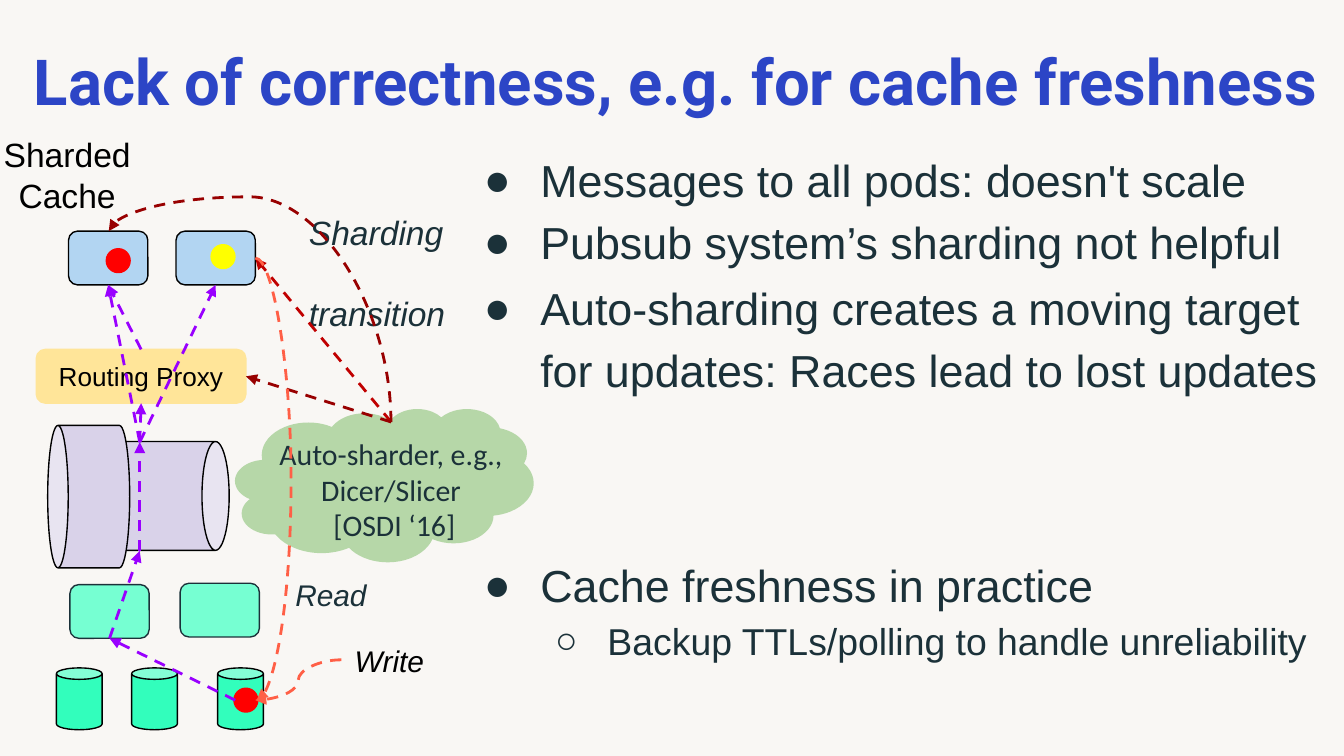
import pptx
import pptx.dml.color
import pptx.enum.dml
import pptx.enum.shapes
import pptx.enum.text
import pptx.oxml.ns
import pptx.util
from dataclasses import dataclass
from lxml import etree

Inches = pptx.util.Inches
Pt = pptx.util.Pt
qn = pptx.oxml.ns.qn
Shape = pptx.enum.shapes.MSO_SHAPE
Connector = pptx.enum.shapes.MSO_CONNECTOR
Align = pptx.enum.text.PP_ALIGN
Anchor = pptx.enum.text.MSO_ANCHOR
rgb = pptx.dml.color.RGBColor.from_string


@dataclass(frozen=True)
class Theme:
    background: str = "F9F7F4"
    title: str = "2C45C6"
    ink: str = "1B3139"
    black: str = "000000"
    pipe: str = "D9D2E9"
    cloud: str = "B6D7A8"
    store: str = "32FEBC"
    server: str = "76FFD2"
    cache: str = "B2D5F2"
    proxy: str = "FFE599"
    stale: str = "FF0000"
    fresh: str = "FFFF00"
    update: str = "9900FF"
    access: str = "FF5F46"
    shard: str = "980000"
    shard_bright: str = "C00000"
    title_size: int = 34
    list_size: int = 24
    sublist_size: int = 20
    label_size: int = 18
    note_size: int = 16
    proxy_size: int = 14


theme = Theme()
deck = pptx.Presentation()
deck.slide_width = Inches(10)
deck.slide_height = deck.slide_width * 9 // 16
page = deck.slides.add_slide(deck.slide_layouts.get_by_name("Comparison"))
page.background.fill.solid()
page.background.fill.fore_color.rgb = rgb(theme.background)


def place(kind, left, top, width, height, fill, line=None, weight=0.75):
    """Add a filled shape, outlined when a line colour is given."""
    shape = page.shapes.add_shape(kind, Inches(left), Inches(top), Inches(width), Inches(height))
    shape.shadow.inherit = False
    shape.fill.solid()
    shape.fill.fore_color.rgb = rgb(fill)
    if line:
        shape.line.color.rgb = rgb(line)
        shape.line.width = Pt(weight)
    else:
        shape.line.fill.background()
    return shape


def dashed_arrow(kind, start, end, color):
    arrow = page.shapes.add_connector(kind, *(Inches(value) for value in start + end))
    arrow.line.color.rgb = rgb(color)
    arrow.line.width = Pt(1.5)
    arrow.line.dash_style = pptx.enum.dml.MSO_LINE.DASH
    properties = arrow._element.spPr
    etree.SubElement(properties.find(qn("a:ln")), qn("a:tailEnd"), type="triangle")
    etree.SubElement(properties, qn("a:effectLst"))
    return arrow


# Title
title = page.shapes.title
title.left, title.top, title.width, title.height = Inches(0.13), Inches(0.32), Inches(9.8), Inches(0.63)
frame = title.text_frame
frame.margin_left = frame.margin_right = frame.margin_top = frame.margin_bottom = 0
frame.vertical_anchor = Anchor.MIDDLE
frame.auto_size = pptx.enum.text.MSO_AUTO_SIZE.NONE
para = frame.paragraphs[0]
para.alignment = Align.CENTER
para.line_spacing = 0.9
span = para.add_run()
span.text = "Lack of correctness, e.g. for cache freshness"
span.font.name, span.font.size, span.font.bold = "Roboto", Pt(theme.title_size), True
span.font.color.rgb = rgb(theme.title)

# Pipe, auto-sharder cloud, stores and servers
for left, top, width, height, turn in [(0.85, 3.24, 0.81, 0.9, 90), (0.13, 3.39, 1.06, 0.61, 270)]:
    place(Shape.CAN, left, top, width, height, theme.pipe, theme.black).rotation = turn
place(Shape.CLOUD, 1.75, 3.04, 2.22, 1.14, theme.cloud)
for left in (0.42, 0.98, 1.62):
    place(Shape.CAN, left, 4.97, 0.34, 0.46, theme.store, theme.black)
server, _ = [place(Shape.ROUNDED_RECTANGLE, left, top, 0.59, 0.4, theme.server, theme.ink)
             for left, top in [(0.52, 4.35), (1.34, 4.34)]]
left_cache, right_cache = [place(Shape.ROUNDED_RECTANGLE, left, 1.72, 0.59, 0.4, theme.cache, theme.black)
                           for left in (0.51, 1.31)]
proxy = place(Shape.ROUNDED_RECTANGLE, 0.27, 2.6, 1.56, 0.4, theme.proxy, theme.proxy)
for left, top, color in [(1.75, 5.13, theme.stale), (1.58, 1.83, theme.fresh), (0.8, 1.86, theme.stale)]:
    place(Shape.OVAL, left, top, 0.16, 0.16, color, color, 2)

# Labels: box, paragraphs as lists of lines, size, font, colour, italic, alignment, vertical inset
labels = [
    ((1.86, 3.14, 2.1, 1.01), [["Auto-sharder, e.g.,", "Dicer/Slicer", " [OSDI ‘16]"]],
     theme.note_size, "Calibri", theme.ink, False, Align.CENTER, 0.1),
    ((-0.1, 0.95, 1.2, 0.71), [["Sharded"], ["Cache"]],
     theme.label_size, "Arial", theme.black, False, Align.CENTER, 0.05),
    ((2.54, 4.73, 1.89, 0.37), [["Write"]],
     theme.note_size, "Arial", theme.black, True, Align.LEFT, 0.05),
    ((2.2, 1.48, 1.25, 0.81), [["Sharding ", "transition"]],
     theme.label_size, "Arial", theme.ink, True, Align.LEFT, 0.1),
    ((2.1, 4.19, 0.84, 0.47), [["Read"]],
     theme.note_size, "Arial", theme.ink, True, Align.LEFT, 0.1),
    (proxy, [["Routing Proxy"]],
     theme.proxy_size, "Arial", theme.black, False, Align.CENTER, 0.1),
]
for target, paragraphs, size, font, color, italic, alignment, inset in labels:
    if target is proxy:
        box = proxy
    else:
        box = page.shapes.add_textbox(*(Inches(value) for value in target))
    frame = box.text_frame
    frame.word_wrap = True
    frame.margin_top = frame.margin_bottom = Inches(inset)
    for number, lines in enumerate(paragraphs):
        para = frame.add_paragraph() if number else frame.paragraphs[0]
        para.alignment = alignment
        para.font.size = Pt(size)
        for row, line in enumerate(lines):
            if row:
                para.add_line_break()
            span = para.add_run()
            span.text = line
            span.font.name, span.font.size, span.font.italic = font, Pt(size), italic
            span.font.color.rgb = rgb(color)

# Bulleted lists: top, height, items with their level
lists = [
    (0.98, 1.07, [("Messages to all pods: doesn't scale", 0), ("Pubsub system’s sharding not helpful", 0)]),
    (1.93, 1.07, [("Auto-sharding creates a moving target for updates: Races lead to lost updates", 0)]),
    (3.99, 1, [("Cache freshness in practice", 0), ("Backup TTLs/polling to handle unreliability", 1)]),
]
levels = [("●", 0.5, -0.42, theme.list_size), ("○", 1, -0.39, theme.sublist_size)]
*bodies, spare = [holder for holder in page.placeholders if holder.placeholder_format.idx in (1, 2, 3, 4)]
spare._element.getparent().remove(spare._element)
for body, (top, height, items) in zip(bodies, lists):
    body.left, body.top, body.width, body.height = Inches(3.42), Inches(top), Inches(6.51), Inches(height)
    frame = body.text_frame
    frame.auto_size = pptx.enum.text.MSO_AUTO_SIZE.NONE
    frame.vertical_anchor = Anchor.TOP
    frame.margin_top = frame.margin_bottom = Inches(0.1)
    for number, (text, level) in enumerate(items):
        bullet, margin, indent, size = levels[level]
        para = frame.add_paragraph() if number else frame.paragraphs[0]
        para.level = level
        para.line_spacing = 1.15
        para.space_before = Pt(0)
        settings = para._p.get_or_add_pPr()
        settings.set("marL", str(Inches(margin)))
        settings.set("indent", str(Inches(indent)))
        etree.SubElement(settings, qn("a:buFont"), typeface="Arial")
        etree.SubElement(settings, qn("a:buChar"), char=bullet)
        span = para.add_run()
        span.text = text
        span.font.name, span.font.size, span.font.bold = "Arial", Pt(size), False
        span.font.color.rgb = rgb(theme.ink)

# Straight arrows: each end is a point or a (shape, side) pair
pipe_out, pipe_in, sharder = (1.04, 3.29), (1.04, 4.1), (2.91, 3.14)
arrows = [
    ((1.75, 5.21), (server, 2), theme.update),
    ((server, 2), pipe_in, theme.update),
    (pipe_in, pipe_out, theme.update),
    (pipe_out, (proxy, 2), theme.update),
    ((proxy, 0), (left_cache, 2), theme.update),
    (pipe_out, (left_cache, 2), theme.update),
    (pipe_out, (right_cache, 2), theme.update),
    (sharder, (right_cache, 3), theme.shard_bright),
    (sharder, (proxy, 3), theme.shard),
]
for start, end, color in arrows:
    points = [(0, 0) if hasattr(stop[0], "shape_id") else stop for stop in (start, end)]
    arrow = dashed_arrow(Connector.STRAIGHT, *points, color)
    if start is not points[0]:
        arrow.begin_connect(*start)
    if end is not points[1]:
        arrow.end_connect(*end)

# Curved arrows: ends before turning, bend as a share of the width, turn in degrees
curves = [
    ((2.54, 4.91), (1.9, 5.21), 0.5, 0, theme.access),
    ((1.9, 1.92), (1.91, 5.21), 27, 0, theme.access),
    ((2.57, 1.38), (1.15, 3.48), 1.18, 90, theme.shard),
]
for start, end, bend, turn, color in curves:
    properties = dashed_arrow(Connector.CURVE, start, end, color)._element.spPr
    properties.find(qn("a:xfrm")).set("rot", str(turn * 60000))
    guides = properties.find(qn("a:prstGeom")).find(qn("a:avLst"))
    etree.SubElement(guides, qn("a:gd"), name="adj1", fmla=f"val {round(bend * 100000)}")

deck.save("out.pptx")
